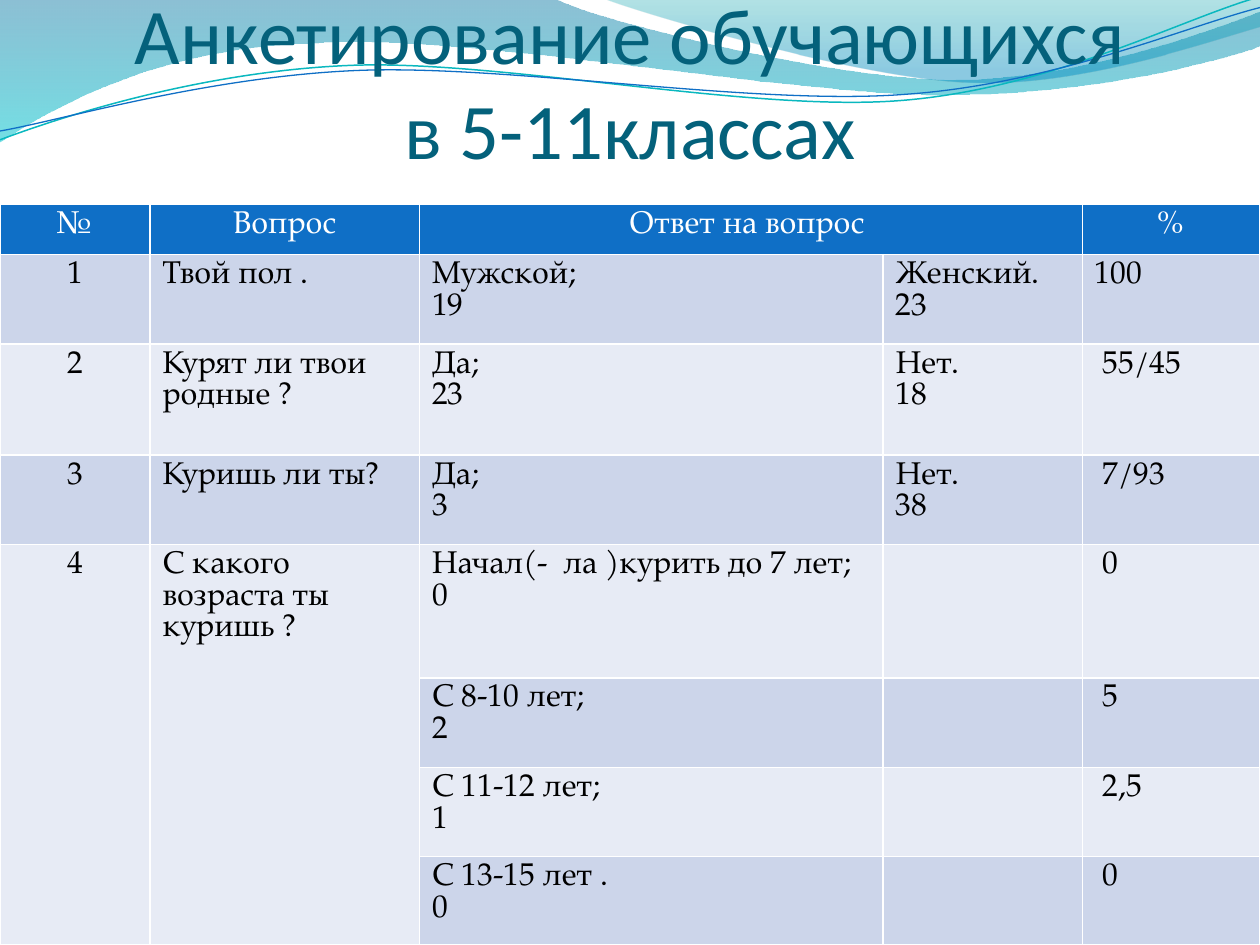
from lxml import etree
from pptx import Presentation, util as u
from pptx.dml.color import RGBColor
from pptx.enum import text
from pptx.oxml.ns import qn

COLORS = {
    "title": "04617B", "header": "0F6FC6", "odd": "CCD5EA", "even": "E7EBF5",
    "white": "FFFFFF", "black": "000000", "teal_line": "0AB8BF",
    "deep_blue": "0074A1", "cyan": "00C6CF", "sea": "00A1A9", "blue": "008BBF",
}
TABLE_FONT = "TeX Gyre Pagella"


def color(name):
    return RGBColor.from_string(COLORS[name])


def add_wave(slide, start, segments, closed):
    """Draw segments in inches: 2 numbers are a line's end, 6 a cubic curve."""
    points = [(segment[i] * 100, segment[i + 1] * 100)
              for segment in segments for i in range(0, len(segment), 2)]
    builder = slide.shapes.build_freeform(
        start[0] * 100, start[1] * 100, scale=u.Inches(0.01))
    builder.add_line_segments(points, close=closed)
    shape = builder.convert_to_shape()
    shape.shadow.inherit = False
    steps = iter(list(shape._element.iter(qn("a:lnTo"))))
    for segment in segments:
        group = [next(steps) for _ in range(len(segment) // 2)]
        if len(group) == 3:
            curve = etree.Element(qn("a:cubicBezTo"))
            group[0].addprevious(curve)
            for step in group:
                curve.append(step[0])
                step.getparent().remove(step)
    return shape


presentation = Presentation()
presentation.slide_width, presentation.slide_height = u.Inches(10), u.Inches(7.5)
slide = presentation.slides.add_slide(presentation.slide_layouts[5])

# Filled waves: start, segments, gradient stops (position, colour, opacity %)
bands = [
    ((0, 0),
     [(4.4, -0.01), (4.76, 0.17, 6.64, 0.63, 7.58, 0.63),
      (8.53, 0.63, 9.58, 0.26, 10, 0.09), (10.01, 0.36),
      (9.83, 0.44, 8.7, 0.76, 7.46, 0.75), (6.22, 0.75, 3.82, 0.28, 2.57, 0.34),
      (1.29, 0.36, 0.46, 0.83, -0.01, 1.13), (0, 0)],
     [(0, "deep_blue", 45), (1, "cyan", 55)]),
    ((4.79, -0.01),
     [(5.09, 0.11, 6.82, 0.62, 7.69, 0.65), (8.56, 0.69, 9.61, 0.32, 10, 0.21),
      (10, 0), (4.79, -0.01)],
     [(0, "sea", 30), (0.8, "blue", 45)]),
]
for start, segments, stops in bands:
    band = add_wave(slide, start, segments, closed=True)
    band.line.fill.background()
    band.fill.gradient()
    band.fill.gradient_angle = 270
    for stop, (position, name, _) in zip(band.fill.gradient_stops, stops):
        stop.position = position
        stop.color.rgb = color(name)
    for element, (_, _, opacity) in zip(band._element.spPr.iter(qn("a:srgbClr")), stops):
        etree.SubElement(element, qn("a:alpha"), val=str(opacity * 1000))

# Thin wave lines
lines = [
    ((0, 1.11),
     [(0.48, 0.93, 1.58, 0.57, 2.77, 0.52), (3.95, 0.47, 5.93, 0.89, 7.13, 0.8),
      (8.33, 0.71, 9.38, 0.15, 9.98, -0.02)], "teal_line", 0.85),
    ((0, 1.04),
     [(0.47, 0.96, 1.64, 0.61, 2.83, 0.56), (4.03, 0.51, 5.97, 0.84, 7.17, 0.75),
      (8.36, 0.67, 9.41, 0.21, 10, 0.06)], "header", 0.75),
]
for start, segments, name, width in lines:
    line = add_wave(slide, start, segments, closed=False)
    line.fill.background()
    line.line.color.rgb = color(name)
    line.line.width = u.Pt(width)

# Title, brought in front of the waves
title = slide.shapes.title
title._element.getparent().append(title._element)
title.left, title.top = u.Inches(0.5), u.Inches(0.29)
title.width, title.height = u.Inches(9), u.Inches(1.1)
frame = title.text_frame
frame.text = "Анкетирование обучающихся\vв 5-11классах"
frame.word_wrap = True
frame.auto_size = text.MSO_AUTO_SIZE.NONE
frame.vertical_anchor = text.MSO_ANCHOR.BOTTOM
frame.margin_left = frame.margin_right = frame.margin_bottom = 0
frame.margin_top = u.Inches(0.05)
paragraph = frame.paragraphs[0]
paragraph.alignment = text.PP_ALIGN.CENTER
paragraph.font.name, paragraph.font.size = "Calibri", u.Pt(45)
paragraph.font.color.rgb = color("title")

# Survey table
column_widths = [1.19, 2.14, 3.68, 1.58, 1.41]
row_heights = [0.4, 0.71, 0.88, 0.71, 1.06, 0.71, 0.71, 0.7]
survey = [
    ["№", "Вопрос", "Ответ на вопрос ", "", "%"],
    ["1", "Твой пол .", "Мужской;\n19", "Женский.\n23", "100"],
    ["2", "Курят ли твои родные ?", "Да;\n23", "Нет.\n18", " 55/45"],
    ["3", "Куришь ли ты?", "Да;\n3", "Нет.\n38", " 7/93"],
    ["4", "С какого возраста ты куришь ?", "Начал(-  ла )курить до 7 лет;\n0", "", " 0"],
    ["", "", "С 8-10 лет;\n2", "", " 5"],
    ["", "", "С 11-12 лет;\n1", "", " 2,5"],
    ["", "", "С 13-15 лет .\n0", "", " 0"],
]
table = slide.shapes.add_table(
    len(row_heights), len(column_widths), 0, u.Inches(1.62),
    u.Inches(10), u.Inches(sum(row_heights))).table
for column, width in zip(table.columns, column_widths):
    column.width = u.Inches(width)
for row, height in zip(table.rows, row_heights):
    row.height = u.Inches(height)

table.cell(0, 2).merge(table.cell(0, 3))
for column_index in (0, 1):
    table.cell(4, column_index).merge(table.cell(7, column_index))

for row_index, values in enumerate(survey):
    is_header = row_index == 0
    fill_name = "header" if is_header else ("even", "odd")[row_index % 2]
    for column_index, value in enumerate(values):
        cell = table.cell(row_index, column_index)
        if cell.is_spanned:
            continue
        cell.fill.solid()
        cell.fill.fore_color.rgb = color(fill_name)
        cell.text = value
        for paragraph in cell.text_frame.paragraphs:
            if is_header or column_index == 0:
                paragraph.alignment = text.PP_ALIGN.CENTER
            paragraph.font.name, paragraph.font.size = TABLE_FONT, u.Pt(18)
            paragraph.font.bold = False
            paragraph.font.color.rgb = color("white" if is_header else "black")

presentation.save("out.pptx")
